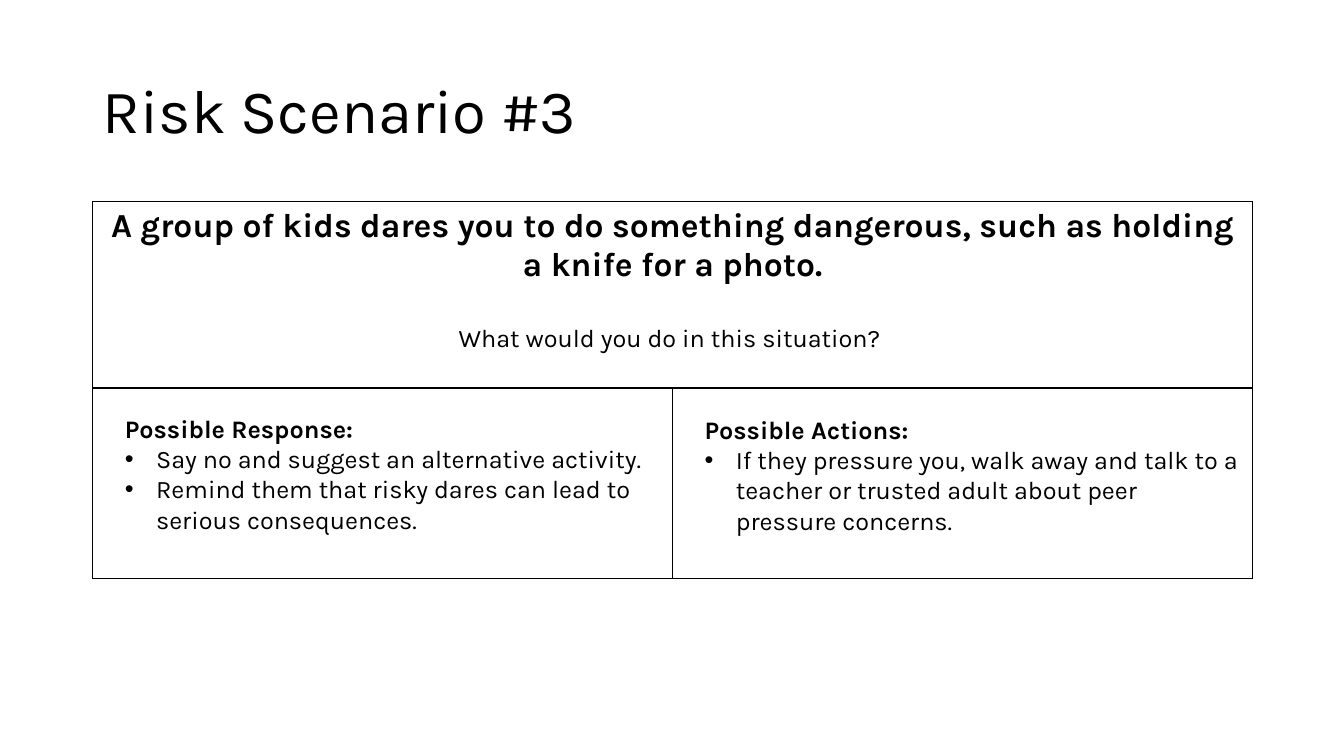
from dataclasses import dataclass

from lxml.etree import SubElement
from pptx import Presentation
from pptx.dml.color import RGBColor
from pptx.enum.text import MSO_ANCHOR, MSO_AUTO_SIZE, PP_ALIGN
from pptx.oxml import parse_xml
from pptx.oxml.ns import nsdecls, qn
from pptx.slide import Slide
from pptx.table import _Cell
from pptx.text.text import TextFrame
from pptx.util import Inches, Pt

FONT = "Karla"
COLORS = {"ink": "000000", "paper": "FFFFFF"}
LEFT, WIDTH = 0.92, 11.5
ROWS = (1.85, 1.89)
INDENT = 0.31


@dataclass
class Panel:
    left: float
    top: float
    height: float
    heading: str
    points: list[str]


PANELS = [
    Panel(1.14, 4.05, 1.31, "Possible Response:", [
        "Say no and suggest an alternative activity.",
        "Remind them that risky dares can lead to serious consequences.",
    ]),
    Panel(6.89, 4.06, 1.62, "Possible Actions:", [
        "If they pressure you, walk away and talk to a teacher or trusted "
        "adult about peer pressure concerns.",
    ]),
]


def write(frame: TextFrame, text: str, *, size: float = 18, bold: bool = False,
          align: PP_ALIGN = PP_ALIGN.LEFT, before: float = 0,
          spacing: float = 1.0, bullet: bool = False) -> None:
    """Fill the first paragraph if it is empty, else add a new one."""
    para = frame.paragraphs[0] if not frame.text else frame.add_paragraph()
    para.alignment = align
    para.space_before = Pt(before)
    para.line_spacing = spacing
    if bullet:
        props = para._p.get_or_add_pPr()
        props.set("marL", str(Inches(INDENT)))
        props.set("indent", str(-Inches(INDENT)))
        SubElement(props, qn("a:buFont"), typeface="Arial")
        SubElement(props, qn("a:buChar"), char="•")
    run = para.add_run()
    run.text = text
    run.font.name = FONT
    run.font.size = Pt(size)
    run.font.bold = bold
    run.font.color.rgb = RGBColor.from_string(COLORS["ink"])


def outline(cell: _Cell) -> None:
    """Clear the cell's fill and rule all four sides."""
    cell.fill.background()
    props = cell._tc.get_or_add_tcPr()
    for spot, side in enumerate(("lnL", "lnR", "lnT", "lnB")):
        props.insert(spot, parse_xml(
            f'<a:{side} {nsdecls("a")} w="{Pt(1)}"><a:solidFill>'
            f'<a:srgbClr val="{COLORS["ink"]}"/></a:solidFill></a:{side}>'))


def add_title(slide: Slide) -> None:
    title = slide.shapes.title
    title.left, title.top = Inches(LEFT), Inches(0.4)
    title.width, title.height = Inches(WIDTH), Inches(1.45)
    frame = title.text_frame
    frame.vertical_anchor = MSO_ANCHOR.MIDDLE
    write(frame, "Risk Scenario #3", size=44, spacing=0.9)


def add_grid(slide: Slide) -> None:
    table = slide.shapes.add_table(
        2, 2, Inches(LEFT), Inches(2), Inches(WIDTH), Inches(sum(ROWS))).table
    table.first_row = table.horz_banding = False
    for row, height in zip(table.rows, ROWS):
        row.height = Inches(height)
    for cell in table.iter_cells():
        outline(cell)
    top = table.cell(0, 0)
    top.merge(table.cell(0, 1))
    write(top.text_frame,
          "A group of kids dares you to do something dangerous, "
          "such as holding a knife for a photo.",
          size=24, bold=True, align=PP_ALIGN.CENTER)
    write(top.text_frame, "What would you do in this situation? ",
          align=PP_ALIGN.CENTER, before=28)


def add_panel(slide: Slide, panel: Panel) -> None:
    box = slide.shapes.add_textbox(Inches(panel.left), Inches(panel.top),
                                   Inches(5.53), Inches(panel.height))
    frame = box.text_frame
    frame.word_wrap = True
    frame.auto_size = MSO_AUTO_SIZE.SHAPE_TO_FIT_TEXT
    write(frame, panel.heading, bold=True)
    for point in panel.points:
        write(frame, point, bullet=True)


def main() -> None:
    deck = Presentation()
    deck.slide_width, deck.slide_height = Inches(13.33), Inches(7.5)
    slide = deck.slides.add_slide(deck.slide_layouts[5])
    fill = slide.background.fill
    fill.solid()
    fill.fore_color.rgb = RGBColor.from_string(COLORS["paper"])

    # Title, scenario table, then the two answers over its lower row
    add_title(slide)
    add_grid(slide)
    for panel in PANELS:
        add_panel(slide, panel)
    deck.save("out.pptx")


if __name__ == "__main__":
    main()
